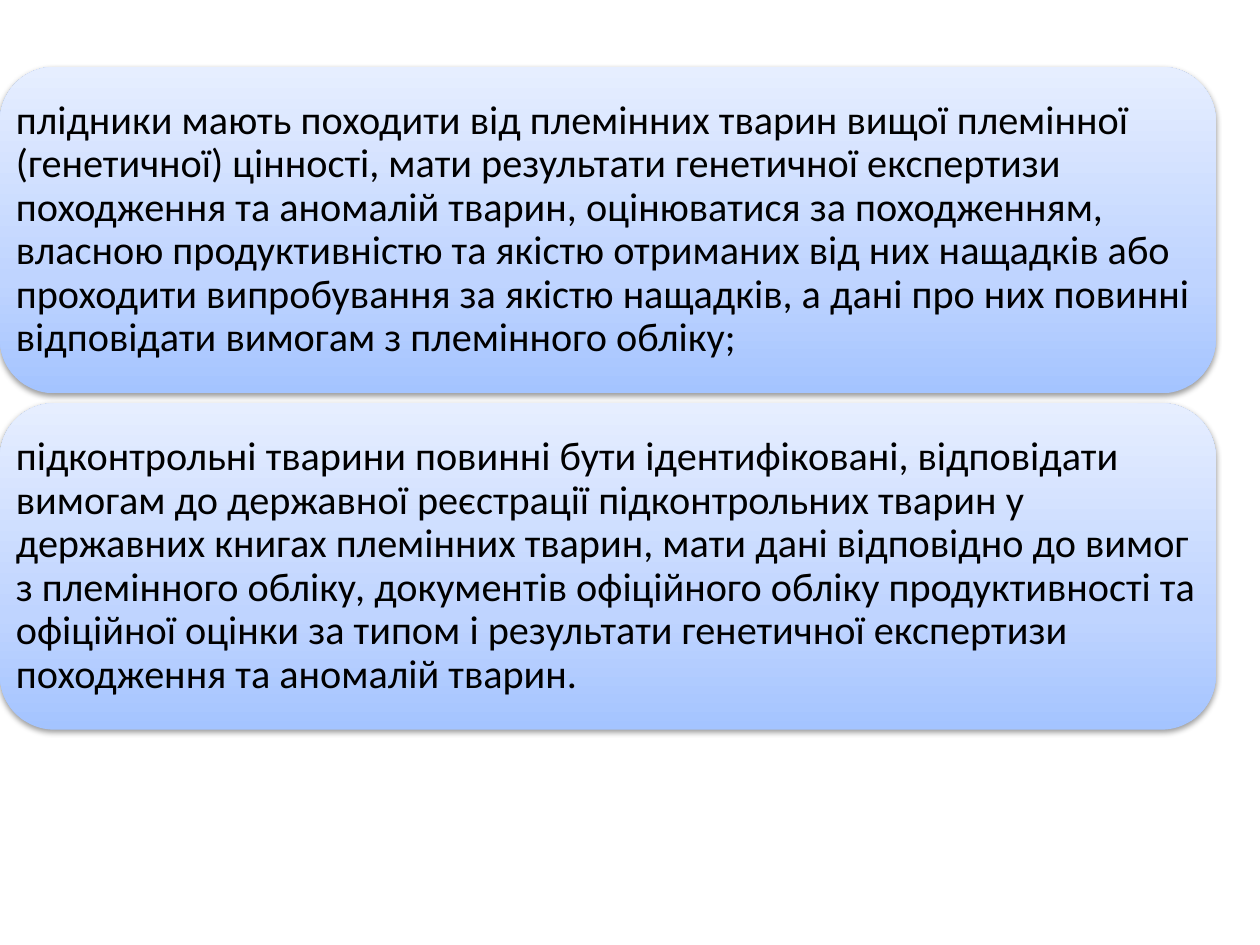
from copy import deepcopy
from dataclasses import dataclass

from lxml import etree
from pptx import Presentation
from pptx.dml.color import RGBColor
from pptx.enum.shapes import MSO_SHAPE
from pptx.enum.text import MSO_ANCHOR, PP_ALIGN
from pptx.oxml.ns import qn
from pptx.util import Cm, Pt

ROUNDED = MSO_SHAPE.ROUNDED_RECTANGLE
MIDDLE = MSO_ANCHOR.MIDDLE
LEFT = PP_ALIGN.LEFT
BLANK_LAYOUT = 6


@dataclass(frozen=True)
class Theme:
    font: str = "Calibri"
    size: float = 23
    text: str = "000000"
    shadow: str = "000000"
    gradient: tuple = ((0, "A4C4FF"), (0.35, "BFD4FF"), (1, "E6EEFF"))


THEME = Theme()
PANEL_TOP = 1.35
PANEL_WIDTH = 24.51
PANEL_HEIGHT = 6.58
PANEL_PITCH = 6.78

REQUIREMENTS = [
    "плідники мають походити від племінних тварин вищої племінної (генетичної) "
    "цінності, мати результати генетичної експертизи походження та аномалій "
    "тварин, оцінюватися за походженням, власною продуктивністю та якістю "
    "отриманих від них нащадків або проходити випробування за якістю нащадків, "
    "а дані про них повинні відповідати вимогам з племінного обліку;",
    "підконтрольні тварини повинні бути ідентифіковані, відповідати вимогам до "
    "державної реєстрації підконтрольних тварин у державних книгах племінних "
    "тварин, мати дані відповідно до вимог з племінного обліку, документів "
    "офіційного обліку продуктивності та офіційної оцінки за типом і результати "
    "генетичної експертизи походження та аномалій тварин.",
]


def apply_gradient(panel):
    panel.fill.gradient()
    panel.fill.gradient_angle = 90
    stop_list = panel.element.spPr.find(".//" + qn("a:gsLst"))
    stop_list.append(deepcopy(stop_list[-1]))
    for stop, (position, color) in zip(panel.fill.gradient_stops, THEME.gradient):
        stop.position = position
        stop.color.rgb = RGBColor.from_string(color)


def apply_shadow(panel):
    panel.shadow.inherit = False
    effects = panel.element.spPr.find(qn("a:effectLst"))
    shadow = etree.SubElement(
        effects, qn("a:outerShdw"), blurRad=str(Pt(3.1)), dist=str(Pt(1.6)),
        dir="5400000", rotWithShape="0",
    )
    color = etree.SubElement(shadow, qn("a:srgbClr"), val=THEME.shadow)
    etree.SubElement(color, qn("a:alpha"), val="38000")


def write_requirement(frame, requirement):
    frame.word_wrap = True
    frame.vertical_anchor = MIDDLE
    frame.margin_left = frame.margin_right = 0
    frame.margin_top = frame.margin_bottom = 0
    frame.text = requirement
    paragraph = frame.paragraphs[0]
    paragraph.alignment = LEFT
    paragraph.line_spacing = 0.9
    paragraph.space_after = Pt(8)
    font = paragraph.runs[0].font
    font.name = THEME.font
    font.size = Pt(THEME.size)
    font.color.rgb = RGBColor.from_string(THEME.text)


def add_requirement_panel(slide, top, requirement):
    panel = slide.shapes.add_shape(
        ROUNDED, Cm(0), Cm(top), Cm(PANEL_WIDTH), Cm(PANEL_HEIGHT)
    )
    panel.line.fill.background()
    apply_gradient(panel)
    apply_shadow(panel)
    write_requirement(panel.text_frame, requirement)


def main():
    presentation = Presentation()
    presentation.slide_width = Cm(25.4)
    presentation.slide_height = Cm(19.05)
    slide = presentation.slides.add_slide(presentation.slide_layouts[BLANK_LAYOUT])
    for row, requirement in enumerate(REQUIREMENTS):
        add_requirement_panel(slide, PANEL_TOP + row * PANEL_PITCH, requirement)
    presentation.save("out.pptx")


if __name__ == "__main__":
    main()
